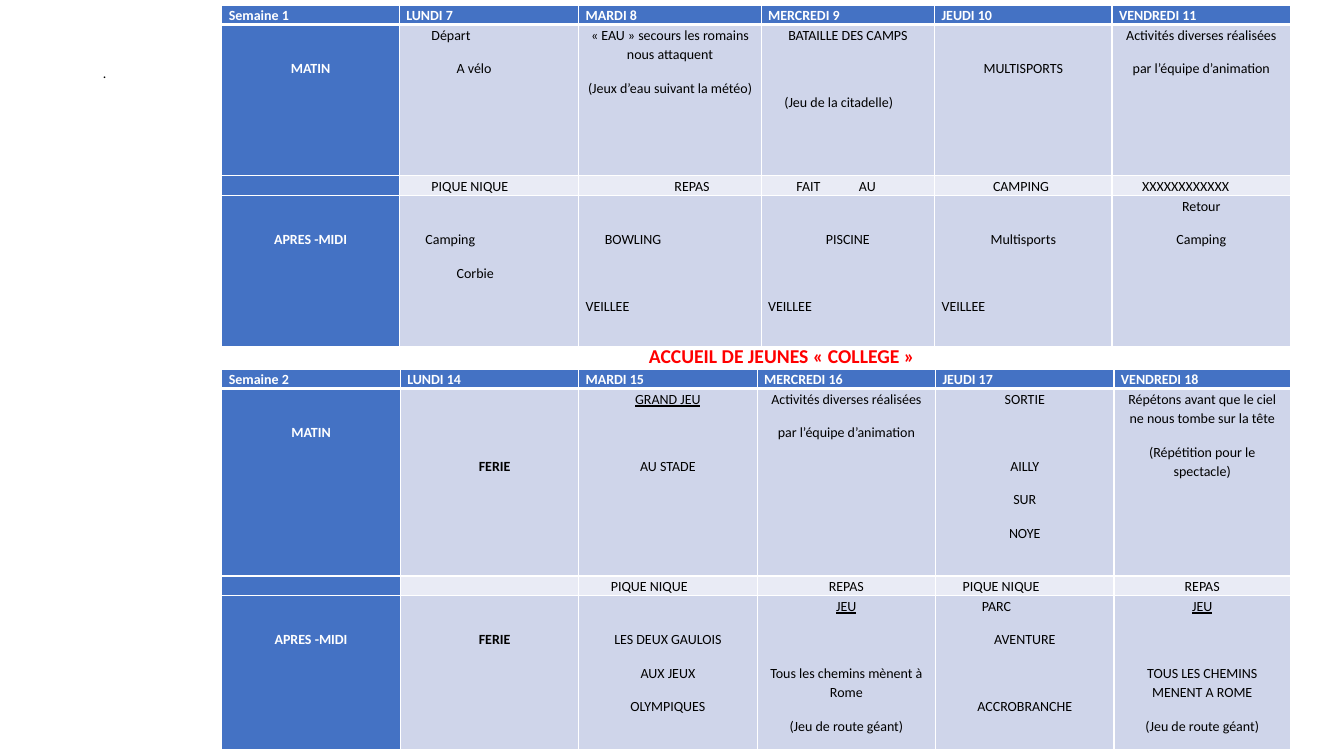
from pptx import Presentation
from pptx.dml.color import RGBColor
from pptx.enum.text import MSO_ANCHOR, MSO_AUTO_SIZE, PP_ALIGN
from pptx.oxml.xmlchemy import OxmlElement
from pptx.util import Inches, Pt

LEFT, MID = PP_ALIGN.LEFT, PP_ALIGN.CENTER
ANCHOR = MSO_ANCHOR.MIDDLE
GROW = MSO_AUTO_SIZE.SHAPE_TO_FIT_TEXT
FONT = "Calibri"
COLORS = {"blue": "4472C4", "band": "CFD5EA", "pale": "E9EBF5",
          "white": "FFFFFF", "black": "000000", "red": "FF0000"}
GAP, SKIP = 10, 24  # points between paragraphs, and for each line left free
BOLD = {"FERIE"}
UNDER = {"GRAND JEU", "JEU"}
TABS = (0.28, 0.9)

# A cell is a list of lines: (text, free lines above, indent or None if centred)
TEAM = [("Activités diverses réalisées", 0, None),
        ("par l’équipe d’animation", 0, None)]
MORNING = [("MATIN", 1, None)]
NOON = [("APRES -MIDI", 1, None)]
MEAL = [("REPAS", 0, None)]
NIGHT = ("VEILLEE", 1, 0)
GAME = ("JEU", 0, None)
GIANT = ("(Jeu de route géant)", 0, None)

WEEKS = [
    {"top": 0.05,
     "cols": [1.76, 1.78, 1.81, 1.72, 1.76, 1.77],
     "rows": [0.19, 1.5, 0.19, 1.5],
     "days": ["Semaine 1", "LUNDI 7", "MARDI 8", "MERCREDI 9", "JEUDI 10",
              "VENDREDI 11"],
     "plan": [
         [MORNING,
          [("Départ", 0, 0.25), ("A vélo", 0, 0.5)],
          [("« EAU » secours les romains nous attaquent", 0, None),
           ("(Jeux d’eau suivant la météo)", 0, None)],
          [("BATAILLE DES CAMPS", 0, None),
           ("(Jeu de la citadelle)", 1, 0.16)],
          [("MULTISPORTS", 1, None)],
          TEAM],
         [[],
          [("PIQUE NIQUE", 0, 0.25)],
          [("REPAS", 0, 0.88)],
          [("\tFAIT\tAU", 0, 0)],
          [("CAMPING", 0, 0.51)],
          [("XXXXXXXXXXXX", 0, 0.23)]],
         [NOON,
          [("Camping", 1, 0.19), ("Corbie", 0, 0.5)],
          [("BOWLING", 1, 0.19), NIGHT],
          [("PISCINE", 1, None), NIGHT],
          [("Multisports", 1, None), NIGHT],
          [("Retour", 0, None), ("Camping", 0, None)]]]},
    {"top": 3.66,
     "cols": [1.77] * 5 + [1.75],
     "rows": [0.19, 1.86, 0.19, 1.53],
     "days": ["Semaine 2", "LUNDI 14", "MARDI 15", "MERCREDI 16", "JEUDI 17",
              "VENDREDI 18"],
     "plan": [
         [MORNING,
          [("FERIE", 2, 0.71)],
          [("GRAND JEU", 0, None), ("AU STADE", 1, None)],
          TEAM,
          [("SORTIE", 0, None), ("AILLY", 1, None), ("SUR", 0, None),
           ("NOYE", 0, None)],
          [("Répétons avant que le ciel ne nous tombe sur la tête", 0, None),
           ("(Répétition pour le spectacle)", 0, None)]],
         [[], [],
          [("PIQUE NIQUE", 0, 0.25)],
          MEAL,
          [("PIQUE NIQUE", 0, 0.2)],
          MEAL],
         [NOON,
          [("FERIE", 1, 0.71)],
          [("LES DEUX GAULOIS", 1, None), ("AUX JEUX", 0, None),
           ("OLYMPIQUES", 0, None)],
          [GAME, ("Tous les chemins mènent à Rome", 1, None), GIANT],
          [("PARC", 0, 0.39), ("AVENTURE", 0, None),
           ("ACCROBRANCHE", 1, None)],
          [GAME, ("TOUS LES CHEMINS MENENT A ROME", 1, None), GIANT]]]},
]


def rgb(name):
    return RGBColor.from_string(COLORS[name])


def write(para, text, size, color, bold=False):
    run = para.add_run()
    run.text = text
    font = run.font
    font.name, font.size, font.bold = FONT, Pt(size), bold
    font.color.rgb = rgb(color)
    return run


def add(parent, tag, **attrs):
    node = OxmlElement(tag)
    for key, value in attrs.items():
        node.set(key, str(value))
    parent.append(node)
    return node


def edge(cell, row):
    """Draw the white cell borders, thick under the header."""
    props = cell._tc.get_or_add_tcPr()
    wide = {"T": row == 1, "B": row == 0}
    for side in "LRTB":
        line = add(props, "a:ln" + side, w=Pt(3 if wide.get(side) else 1))
        fill = add(line, "a:solidFill")
        add(fill, "a:srgbClr", val=COLORS["white"])


def set_tabs(para):
    stops = add(para._p.get_or_add_pPr(), "a:tabLst")
    for pos in TABS:
        add(stops, "a:tab", pos=Inches(pos), algn="l")


def fill_cell(cell, lines, row, col):
    head = row == 0 or col == 0
    edge(cell, row)
    cell.fill.solid()
    cell.fill.fore_color.rgb = rgb(
        "blue" if head else "pale" if row == 2 else "band")
    cell.margin_left = cell.margin_right = Inches(0.07)
    cell.margin_bottom = 0
    cell.margin_top = Pt(SKIP * lines[0][1]) if lines else 0
    frame = cell.text_frame
    if not lines:
        add(frame.paragraphs[0]._p, "a:endParaRPr", sz=1000)
    for i, (text, skip, indent) in enumerate(lines):
        para = frame.add_paragraph() if i else frame.paragraphs[0]
        para.line_spacing = 1.15
        para.alignment = MID if indent is None else LEFT
        if i:
            para.space_before = Pt(GAP + SKIP * skip)
        if indent:
            para._p.get_or_add_pPr().set("marL", str(Inches(indent)))
        if "\t" in text:
            set_tabs(para)
        run = write(para, text, 10, "white" if head else "black",
                    head or text in BOLD)
        if text in UNDER:
            run.font.underline = True


def add_week(slide, week):
    cols, rows = week["cols"], week["rows"]
    table = slide.shapes.add_table(
        len(rows), len(cols), Inches(2.2), Inches(week["top"]),
        Inches(sum(cols)), Inches(sum(rows))).table
    table.first_row = table.horz_banding = False
    for col, width in zip(table.columns, cols):
        col.width = Inches(width)
    for row, height in zip(table.rows, rows):
        row.height = Inches(height)
    header = [[(day, 0, 0)] for day in week["days"]]
    for r, cells in enumerate([header] + week["plan"]):
        for c, lines in enumerate(cells):
            fill_cell(table.cell(r, c), lines, r, c)


def main():
    deck = Presentation()
    deck.slide_width, deck.slide_height = Inches(13.33), Inches(7.5)
    slide = deck.slides.add_slide(deck.slide_layouts[5])

    title = slide.shapes.title
    title.left, title.top = Inches(0.92), Inches(0.41)
    title.width, title.height = Inches(0.35), Inches(0.65)
    title.text_frame.vertical_anchor = ANCHOR
    para = title.text_frame.paragraphs[0]
    para.alignment, para.line_spacing = LEFT, 0.9
    write(para, ".", 10, "black")

    for week in WEEKS:
        add_week(slide, week)

    label = slide.shapes.add_textbox(
        Inches(1.09), Inches(3.28), Inches(13.33), Inches(0.5)).text_frame
    label.word_wrap, label.auto_size = False, GROW
    label.vertical_anchor = ANCHOR
    para = label.paragraphs[0]
    para.alignment = MID
    write(para, "ACCUEIL DE JEUNES « COLLEGE »", 14, "red", True)

    deck.save("out.pptx")


if __name__ == "__main__":
    main()
